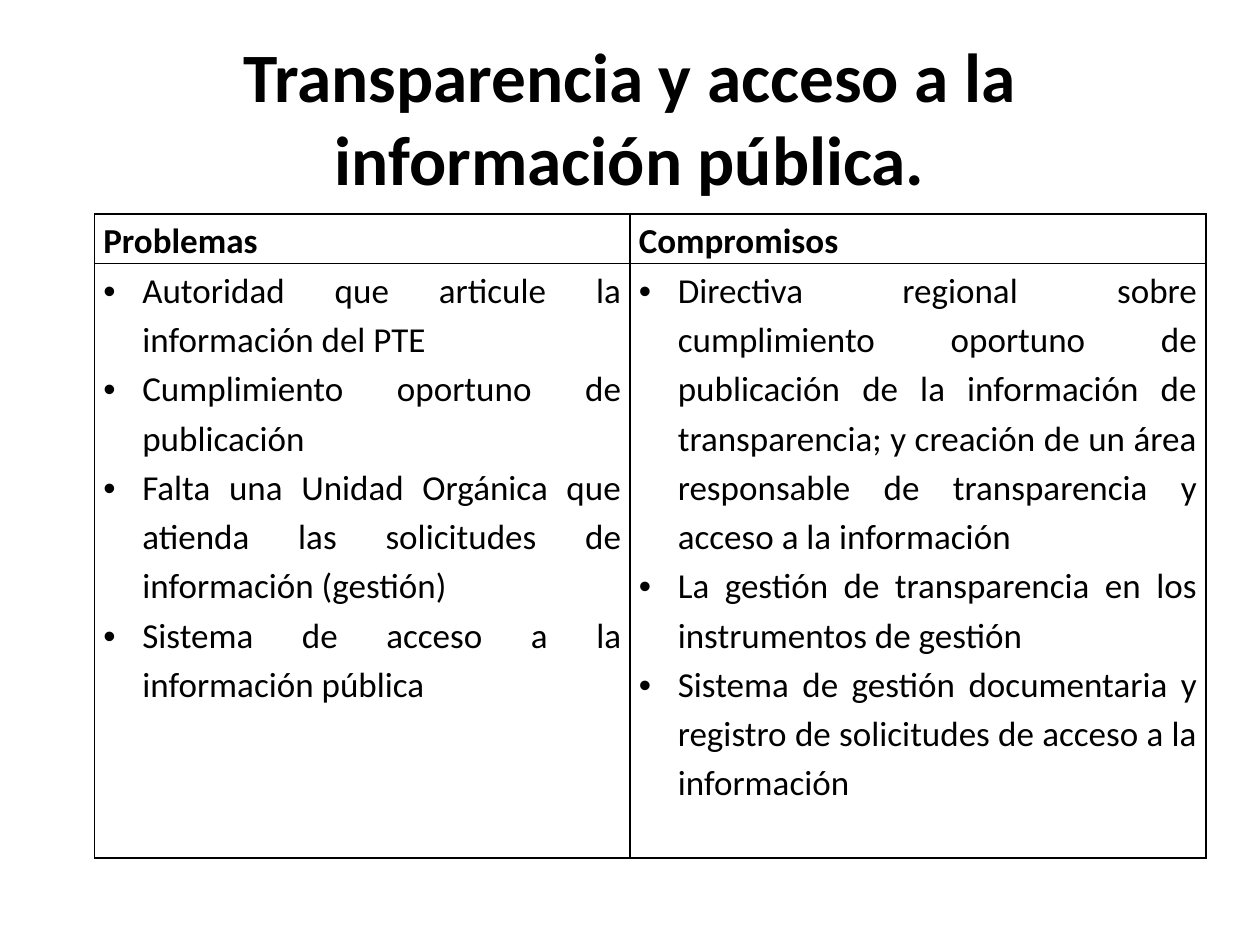
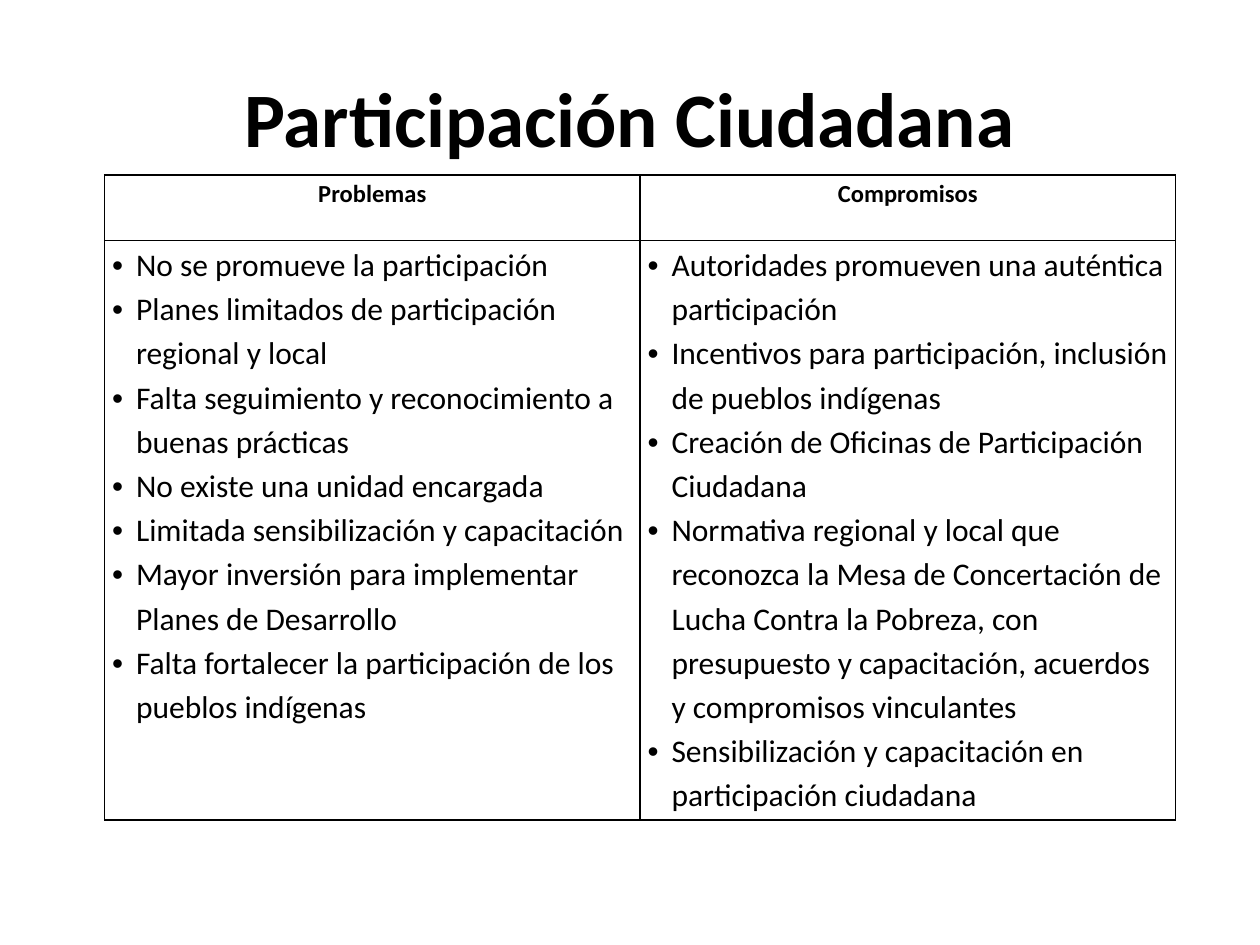
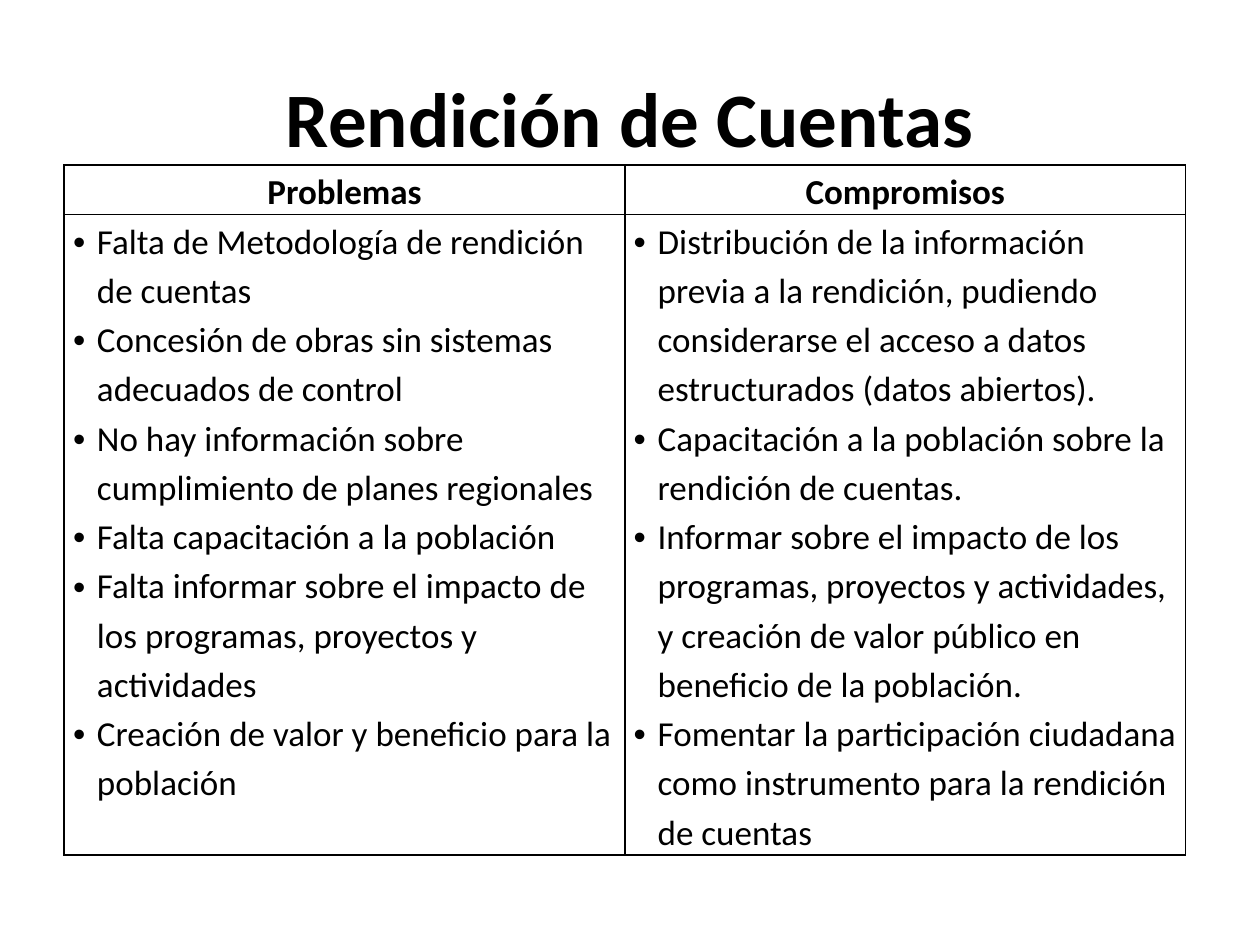
"""Build three slides that pair problems with commitments in a two-column table."""
from lxml import etree
from pptx import Presentation
from pptx import util as u
from pptx.dml.color import RGBColor
from pptx.enum import text
from pptx.oxml import ns

BLACK = RGBColor(0x00, 0x00, 0x00)
FONT = "Calibri"
HEADERS = ("Problemas", "Compromisos")
LEFT, CENTER, JUSTIFY = text.PP_ALIGN.LEFT, text.PP_ALIGN.CENTER, text.PP_ALIGN.JUSTIFY

TOPICS = [
    dict(
        title="Transparencia y acceso a la información pública.", title_size=39.6,
        position=(0.75, 1.7), columns=(4.25, 4.57), rows=(0.39, 4.72), margin=0.07,
        header_size=20, header_align=LEFT, body_size=20, body_align=JUSTIFY, indent=0.31,
        problems=[
            "Autoridad que articule la información del PTE",
            "Cumplimiento oportuno de publicación",
            "Falta una Unidad Orgánica que atienda las solicitudes de información (gestión)",
            "Sistema de acceso a la información pública",
        ],
        commitments=[
            "Directiva regional sobre cumplimiento oportuno de publicación de la información de "
            "transparencia; y creación de un área responsable de transparencia y acceso a la información",
            "La gestión de transparencia en los instrumentos de gestión",
            "Sistema de gestión documentaria y registro de solicitudes de acceso a la información",
        ],
    ),
    dict(
        title="Participación Ciudadana", title_size=44,
        position=(0.83, 1.39), columns=(4.25, 4.25), rows=(0.52, 4.6), margin=0.06,
        header_size=14, header_align=CENTER, body_size=18, body_align=LEFT, indent=0.19,
        problems=[
            "No se promueve la participación",
            "Planes limitados de participación regional y local",
            "Falta seguimiento y reconocimiento a buenas prácticas",
            "No existe una unidad encargada",
            "Limitada sensibilización y capacitación",
            "Mayor inversión para implementar Planes de Desarrollo",
            "Falta fortalecer la participación de los pueblos indígenas",
        ],
        commitments=[
            "Autoridades promueven una auténtica participación",
            "Incentivos para participación, inclusión de pueblos indígenas",
            "Creación de Oficinas de Participación Ciudadana",
            "Normativa regional y local que reconozca la Mesa de Concertación de Lucha Contra la "
            "Pobreza, con presupuesto y capacitación, acuerdos y compromisos vinculantes",
            "Sensibilización y capacitación en participación ciudadana",
        ],
    ),
    dict(
        title="Rendición de Cuentas", title_size=44,
        position=(0.51, 1.31), columns=(4.45, 4.45), rows=(0.39, 5.08), margin=0.07,
        header_size=20, header_align=CENTER, body_size=20, body_align=LEFT, indent=0.19,
        problems=[
            "Falta de Metodología de rendición de cuentas",
            "Concesión de obras sin sistemas adecuados de control",
            "No hay información sobre cumplimiento de planes regionales",
            "Falta capacitación a la población",
            "Falta informar sobre el impacto de los programas, proyectos y actividades",
            "Creación de valor y beneficio para la población",
        ],
        commitments=[
            "Distribución de la información previa a la rendición, pudiendo considerarse el acceso "
            "a datos estructurados (datos abiertos).",
            "Capacitación a la población sobre la rendición de cuentas.",
            "Informar sobre el impacto de los programas, proyectos y actividades, y creación de "
            "valor público en beneficio de la población.",
            "Fomentar la participación ciudadana como instrumento para la rendición de cuentas",
        ],
    ),
]


def format_paragraph(paragraph, size, bold, align):
    """Apply the shared font and the given emphasis to a paragraph."""
    paragraph.alignment = align
    for run in paragraph.runs:
        run.font.name = FONT
        run.font.size = u.Pt(size)
        run.font.bold = bold
        run.font.color.rgb = BLACK


def frame_cell(cell, margin):
    """Give a cell its side margins, thin black borders and no fill."""
    cell.margin_left = cell.margin_right = u.Inches(margin)
    cell.margin_top = cell.margin_bottom = 0
    properties = cell._tc.get_or_add_tcPr()
    for side in ("lnL", "lnR", "lnT", "lnB"):
        line = etree.SubElement(properties, ns.qn(f"a:{side}"), w=str(u.Pt(1)))
        fill = etree.SubElement(line, ns.qn("a:solidFill"))
        etree.SubElement(fill, ns.qn("a:srgbClr"), val=str(BLACK))
    cell.fill.background()


presentation = Presentation()
presentation.slide_width = u.Inches(10)
presentation.slide_height = u.Inches(7.5)

for topic in TOPICS:
    slide = presentation.slides.add_slide(presentation.slide_layouts[5])
    title = slide.shapes.title
    title.left, title.top = u.Inches(0.5), u.Inches(0.3)
    title.width, title.height = u.Inches(9), u.Inches(1.25)
    title.text_frame.text = topic["title"]
    title.text_frame.auto_size = text.MSO_AUTO_SIZE.NONE
    title.text_frame.vertical_anchor = text.MSO_ANCHOR.MIDDLE
    format_paragraph(title.text_frame.paragraphs[0], topic["title_size"], True, CENTER)

    left, top = topic["position"]
    table = slide.shapes.add_table(
        2, 2, u.Inches(left), u.Inches(top),
        u.Inches(sum(topic["columns"])), u.Inches(sum(topic["rows"])),
    ).table
    table.first_row = table.horz_banding = False
    for row, height in zip(table.rows, topic["rows"]):
        row.height = u.Inches(height)

    for index, items in enumerate((topic["problems"], topic["commitments"])):
        table.columns[index].width = u.Inches(topic["columns"][index])
        header, body = table.cell(0, index), table.cell(1, index)
        frame_cell(header, topic["margin"])
        frame_cell(body, topic["margin"])

        header.text_frame.text = HEADERS[index]
        paragraph = header.text_frame.paragraphs[0]
        paragraph.line_spacing = 1.15
        format_paragraph(paragraph, topic["header_size"], True, topic["header_align"])

        body.text_frame.text = "\n".join(items)
        for paragraph in body.text_frame.paragraphs:
            properties = paragraph._p.get_or_add_pPr()
            properties.set("marL", str(u.Inches(topic["indent"])))
            properties.set("indent", str(-u.Inches(topic["indent"])))
            etree.SubElement(properties, ns.qn("a:buFont"), typeface="Arial")
            etree.SubElement(properties, ns.qn("a:buChar"), char="•")
            paragraph.line_spacing = 1.15
            format_paragraph(paragraph, topic["body_size"], False, topic["body_align"])

presentation.save("out.pptx")
